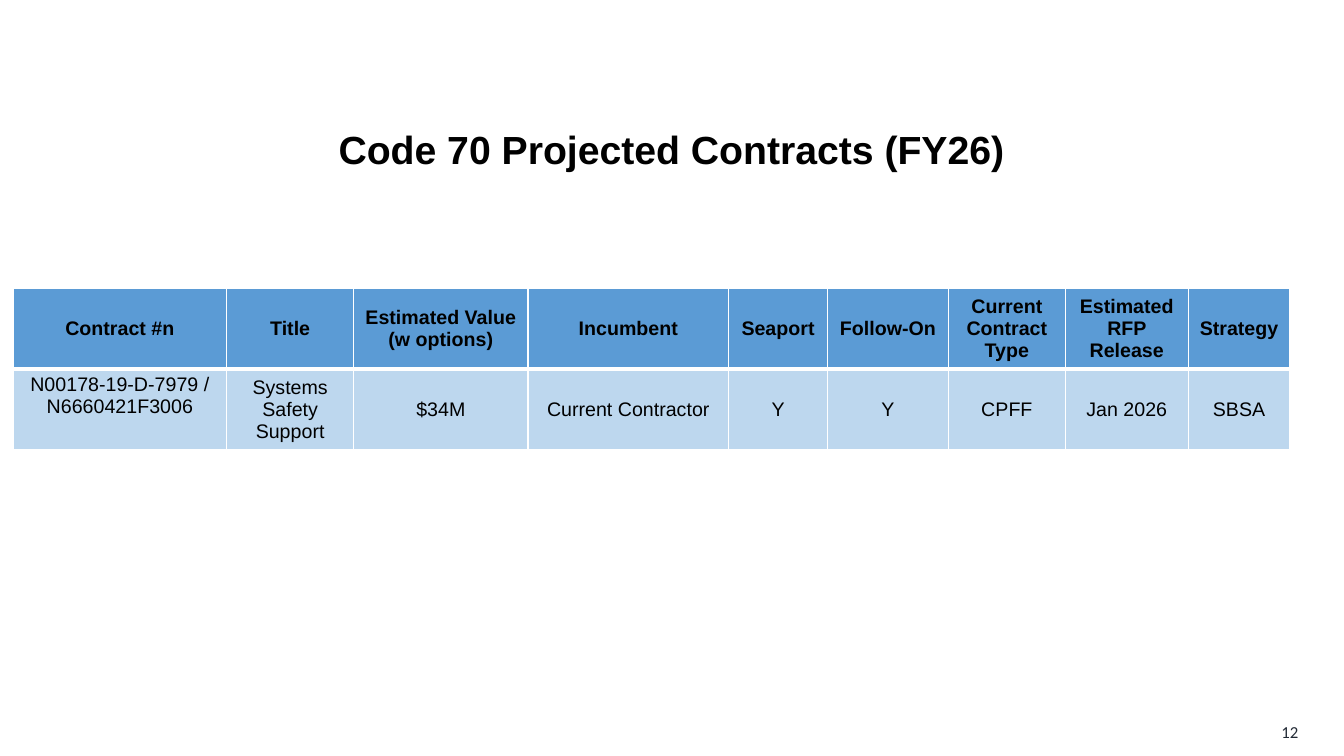
"""Build the Code 70 projected contracts slide."""
from dataclasses import dataclass

from lxml import etree
from pptx import Presentation
from pptx.dml.color import RGBColor
from pptx.enum.text import MSO_ANCHOR, PP_ALIGN
from pptx.oxml.ns import qn
from pptx.slide import Slide
from pptx.table import _Cell
from pptx.text.text import TextFrame
from pptx.util import Pt

CENTER, RIGHT = PP_ALIGN.CENTER, PP_ALIGN.RIGHT
TOP, MIDDLE = MSO_ANCHOR.TOP, MSO_ANCHOR.MIDDLE
COLORS = {
    "text": "000000",
    "number": "222A35",
    "header": "5B9BD5",
    "body": "BDD7EE",
    "border": "FFFFFF",
}
TABLE_LEFT, TABLE_TOP, ROW_HEIGHT = 9.36, 205.9, 54
THIN, THICK = 1, 3


@dataclass(frozen=True)
class TextStyle:
    size: float
    font: str = "Arial"
    color: str = "text"
    bold: bool = False
    align: PP_ALIGN = CENTER
    line_spacing: float = 1.0


@dataclass(frozen=True)
class Label:
    text: str
    left: float
    top: float
    width: float
    height: float
    style: TextStyle


@dataclass(frozen=True)
class Column:
    header: str
    value: str
    width: float
    value_anchor: MSO_ANCHOR = MIDDLE


HEADER_STYLE = TextStyle(14, bold=True)
BODY_STYLE = TextStyle(14)
LABELS = [
    Label("12", 718.6, 508.3, 216, 28.8,
          TextStyle(12, "Calibri", "number", align=RIGHT)),
    Label("Code 70 Projected Contracts (FY26)", 88.6, 82.8, 781.9, 53.3,
          TextStyle(28, bold=True, line_spacing=0.8)),
]
COLUMNS = [
    Column("Contract #n", "N00178-19-D-7979 / N6660421F3006", 152.6, TOP),
    Column("Title", "Systems Safety Support", 90.7),
    Column("Estimated Value\n(w options)", "$34M", 124.6),
    Column("Incumbent", "Current Contractor", 143.3),
    Column("Seaport", "Y", 70.6),
    Column("Follow-On", "Y", 86.4),
    Column("Current Contract Type", "CPFF", 83.5),
    Column("Estimated RFP Release", "Jan 2026", 87.8),
    Column("Strategy", "SBSA", 72.7),
]


def write_text(frame: TextFrame, text: str, style: TextStyle) -> None:
    frame.text = text
    frame.word_wrap = True
    for para in frame.paragraphs:
        para.alignment = style.align
        para.line_spacing = style.line_spacing
        for span in para.runs:
            span.font.name = style.font
            span.font.size = Pt(style.size)
            span.font.bold = style.bold
            span.font.color.rgb = RGBColor.from_string(COLORS[style.color])


def add_label(page: Slide, label: Label) -> None:
    box = page.shapes.add_textbox(
        Pt(label.left), Pt(label.top), Pt(label.width), Pt(label.height))
    box.text_frame.vertical_anchor = MIDDLE
    write_text(box.text_frame, label.text, label.style)


def set_borders(cell: _Cell, top: float, bottom: float) -> None:
    properties = cell._tc.get_or_add_tcPr()
    widths = {"a:lnL": THIN, "a:lnR": THIN, "a:lnT": top, "a:lnB": bottom}
    for position, (tag, width) in enumerate(widths.items()):
        line = etree.Element(qn(tag), w=str(Pt(width)))
        fill = etree.SubElement(line, qn("a:solidFill"))
        etree.SubElement(fill, qn("a:srgbClr"), val=COLORS["border"])
        properties.insert(position, line)


def fill_cell(cell: _Cell, text: str, style: TextStyle, color: str,
              anchor: MSO_ANCHOR) -> None:
    cell.fill.solid()
    cell.fill.fore_color.rgb = RGBColor.from_string(COLORS[color])
    cell.vertical_anchor = anchor
    write_text(cell.text_frame, text, style)


def add_contract_table(page: Slide, columns: list[Column]) -> None:
    total_width = sum(column.width for column in columns)
    table = page.shapes.add_table(
        2, len(columns), Pt(TABLE_LEFT), Pt(TABLE_TOP),
        Pt(total_width), Pt(2 * ROW_HEIGHT)).table
    for row in table.rows:
        row.height = Pt(ROW_HEIGHT)
    for index, column in enumerate(columns):
        table.columns[index].width = Pt(column.width)
        header, body = table.cell(0, index), table.cell(1, index)
        fill_cell(header, column.header, HEADER_STYLE, "header", MIDDLE)
        set_borders(header, THIN, THICK)
        fill_cell(body, column.value, BODY_STYLE, "body", column.value_anchor)
        set_borders(body, THICK, THIN)


def main() -> None:
    deck = Presentation()
    deck.slide_width, deck.slide_height = Pt(960), Pt(540)
    page = deck.slides.add_slide(deck.slide_layouts[6])
    for label in LABELS:
        add_label(page, label)
    add_contract_table(page, COLUMNS)
    deck.save("out.pptx")


if __name__ == "__main__":
    main()
